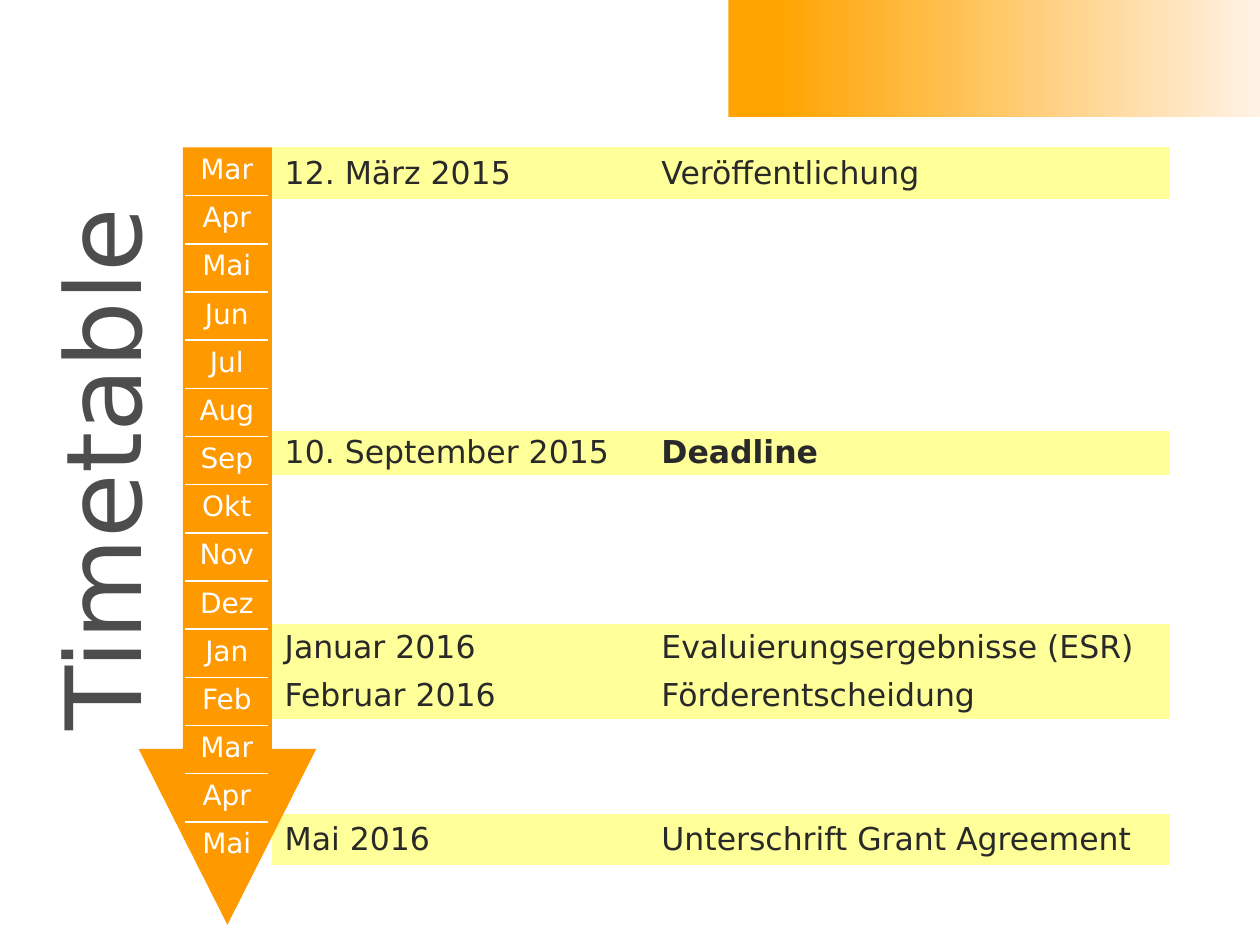
import pptx
import pptx.dml.color
import pptx.enum.shapes
import pptx.enum.text
import pptx.oxml
import pptx.oxml.ns
import pptx.util
from pptx.util import Inches

FONT = "DejaVu Sans"
NO_STYLE = "{2D5ABB26-0587-4C30-8999-92F81FD0307C}"
MONTHS = "Mar Apr Mai Jun Jul Aug Sep Okt Nov Dez Jan Feb Mar Apr Mai".split()
ROW_HEIGHTS = [0.41, 0.36, 0.36, 0.36, 0.49, 0.27, 0.35, 0.33,
               0.38, 0.47, 0.39, 0.37, 0.33, 0.42, 0.41]
MILESTONES = {
    0: ("12. März 2015", "Veröffentlichung"),
    6: ("10. September 2015", "Deadline"),
    10: ("Januar 2016", "Evaluierungsergebnisse (ESR)"),
    11: ("Februar 2016", "Förderentscheidung"),
    14: ("Mai 2016", "Unterschrift Grant Agreement"),
}


def color(value):
    return pptx.dml.color.RGBColor.from_string(value)


def write(frame, text, size=18, fill="292929", bold=False, align="LEFT"):
    paragraph = frame.paragraphs[0]
    paragraph.alignment = getattr(pptx.enum.text.PP_ALIGN, align)
    run = paragraph.add_run()
    run.text = text
    run.font.name = FONT
    run.font.size = pptx.util.Pt(size)
    run.font.bold = bold
    run.font.color.rgb = color(fill)


class TimetableSlide:
    """Holds the style and the slide, and draws each kind of element."""

    orange, yellow, white, gray = "FF9900", "FFFF99", "FFFFFF", "4D4D4D"

    def __init__(self, presentation):
        self.slide = presentation.slides.add_slide(presentation.slide_layouts[5])

    def shape(self, kind, left, top, width, height):
        shape = self.slide.shapes.add_shape(
            getattr(pptx.enum.shapes.MSO_SHAPE, kind),
            Inches(left), Inches(top), Inches(width), Inches(height))
        shape.shadow.inherit = False
        shape.line.fill.background()
        return shape

    def banner(self):
        fill = self.shape("RECTANGLE", 5.78, 0, 4.22, 0.93).fill
        fill.gradient()
        fill.gradient_angle = 0
        stops = [(0.09, "FFA400"), (1, "FFF2E5")]
        for stop, (position, value) in zip(fill.gradient_stops, stops):
            stop.position = position
            stop.color.rgb = color(value)

    def arrow(self):
        arrow = self.shape("DOWN_ARROW", 1.1, 1.17, 1.41, 6.17)
        arrow.adjustments[0] = 0.5
        arrow.adjustments[1] = 0.99
        arrow.fill.solid()
        arrow.fill.fore_color.rgb = color(self.orange)

    def title(self, text):
        title = self.slide.shapes.title
        title.left, title.top = Inches(-1.45), Inches(3.17)
        title.width, title.height = Inches(4.49), Inches(1.11)
        title.rotation = 270
        frame = title.text_frame
        frame.word_wrap = True
        frame.auto_size = pptx.enum.text.MSO_AUTO_SIZE.NONE
        frame.vertical_anchor = pptx.enum.text.MSO_ANCHOR.TOP
        write(frame, text, size=60, fill=self.gray, align="CENTER")

    def table(self, left, top, widths, heights):
        table = self.slide.shapes.add_table(
            len(heights), len(widths), Inches(left), Inches(top),
            Inches(sum(widths)), Inches(sum(heights))).table
        table.first_row = table.horz_banding = False
        table._tbl.tblPr.find(pptx.oxml.ns.qn("a:tableStyleId")).text = NO_STYLE
        for column, width in zip(table.columns, widths):
            column.width = Inches(width)
        for row, height in zip(table.rows, heights):
            row.height = Inches(height)
        return table

    def border(self, cell, side):
        cell._tc.get_or_add_tcPr().append(pptx.oxml.parse_xml(
            f'<a:{side} {pptx.oxml.ns.nsdecls("a")} w="12700"><a:solidFill>'
            f'<a:srgbClr val="{self.white}"/></a:solidFill></a:{side}>'))

    def milestones(self):
        table = self.table(2.16, 1.17, [2.99, 4.14], ROW_HEIGHTS)
        for index, row in enumerate(table.rows):
            texts = MILESTONES.get(index, ("", ""))
            for cell, text in zip(row.cells, texts):
                cell.margin_top = cell.margin_bottom = Inches(0.01)
                cell.vertical_anchor = pptx.enum.text.MSO_ANCHOR.MIDDLE
                if text:
                    cell.fill.solid()
                    cell.fill.fore_color.rgb = color(self.yellow)
                    write(cell.text_frame, text, bold=text == "Deadline")
                else:
                    cell.fill.background()
                    cell.text_frame.paragraphs[0]._p.append(pptx.oxml.parse_xml(
                        f'<a:endParaRPr {pptx.oxml.ns.nsdecls("a")} sz="1000"/>'))

    def months(self):
        count = len(MONTHS)
        table = self.table(1.47, 1.17, [0.66], [5.74 / count] * count)
        for index, month in enumerate(MONTHS):
            cell = table.cell(index, 0)
            if index > 0:
                self.border(cell, "lnT")
            if index < count - 1:
                self.border(cell, "lnB")
            cell.fill.background()
            write(cell.text_frame, month, size=16, fill=self.white, align="CENTER")


def main():
    presentation = pptx.Presentation()
    presentation.slide_width, presentation.slide_height = Inches(10), Inches(7.5)
    timetable = TimetableSlide(presentation)
    timetable.banner()
    timetable.milestones()
    timetable.arrow()
    timetable.title("Timetable")
    timetable.months()
    presentation.save("out.pptx")


if __name__ == "__main__":
    main()
